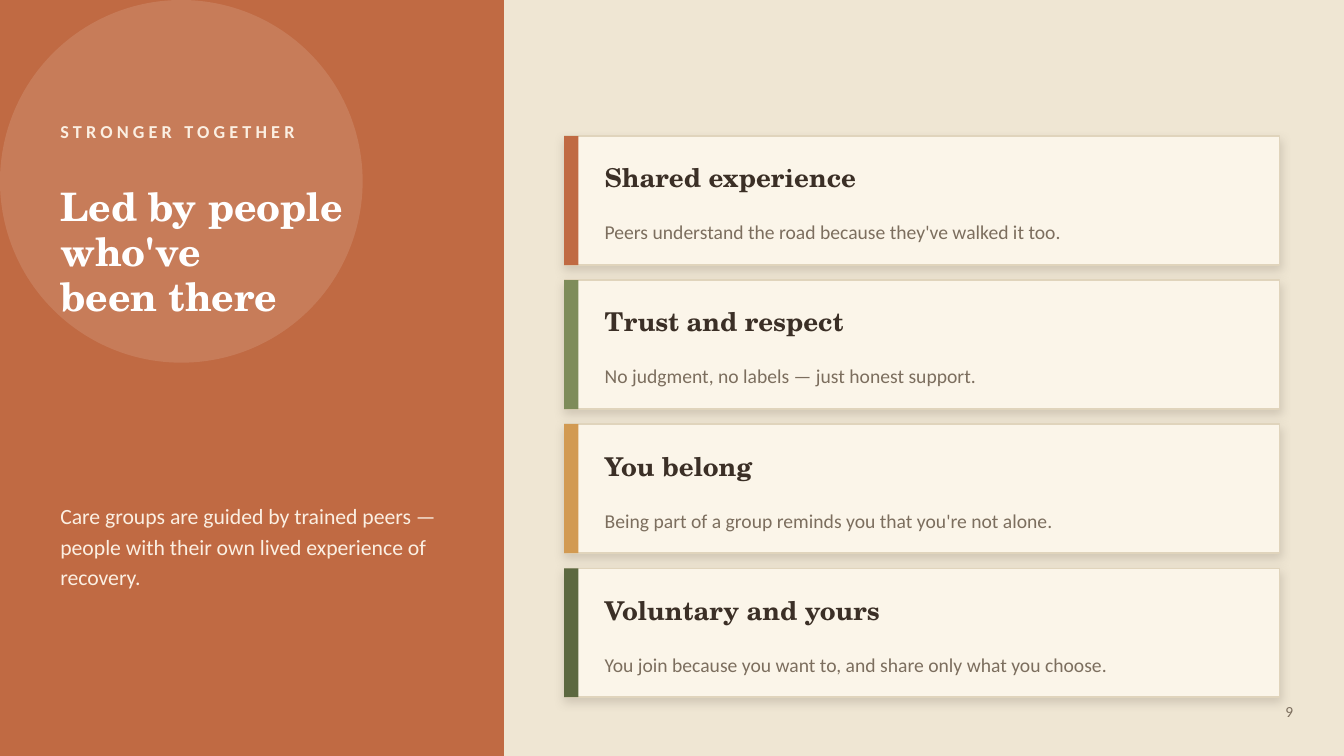
from lxml import etree
from pptx import Presentation
from pptx.dml.color import RGBColor
from pptx.enum import shapes, text
from pptx.oxml import ns
from pptx.util import Cm, Pt

KICKER = "STRONGER TOGETHER"
TITLE = ["Led by people who've", "been there"]
INTRO = ("Care groups are guided by trained peers — people with their own "
         "lived experience of recovery.")
CARDS = [
    ("Shared experience", "Peers understand the road because they've walked it too.", "clay"),
    ("Trust and respect", "No judgment, no labels — just honest support.", "sage"),
    ("You belong", "Being part of a group reminds you that you're not alone.", "gold"),
    ("Voluntary and yours", "You join because you want to, and share only what you choose.", "moss"),
]
PAGE = "9"

COLORS = {
    "sand": "EFE6D3", "clay": "C06A43", "sage": "7E8C5A", "gold": "D29A52",
    "moss": "5C6840", "cream": "FBF5E9", "edge": "E0D4BC", "white": "FFFFFF",
    "blush": "FBEFE2", "ink": "3B2F26", "taupe": "7C6E5E",
}
SERIF, SANS = "TeX Gyre Schola", "Calibri"
WIDTH, HEIGHT = 33.87, 19.05
PANEL = 12.7
MARGIN, COLUMN = 1.52, 10.16
CARD_X, CARD_Y, CARD_W, CARD_H, PITCH = 14.22, 3.43, 18.03, 3.25, 3.63
BAR = 0.36
TEXT_X, TEXT_W = 15.24, 16.51


def color(name):
    return RGBColor.from_string(COLORS[name])


def add_alpha(node, percent):
    etree.SubElement(node, ns.qn("a:alpha"), val=str(percent * 1000))


def add_block(kind, box, fill, line=None):
    block = slide.shapes.add_shape(kind, *map(Cm, box))
    block.shadow.inherit = False
    block.fill.solid()
    block.fill.fore_color.rgb = color(fill)
    if line:
        block.line.color.rgb = color(line)
        block.line.width = Pt(1)
    else:
        block.line.fill.background()
    return block


def add_shadow(block):
    effects = block._element.spPr.find(ns.qn("a:effectLst"))
    outer = etree.SubElement(effects, ns.qn("a:outerShdw"), blurRad=str(Pt(7)),
                             dist=str(Pt(3)), dir="5400000", algn="ctr", rotWithShape="0")
    add_alpha(etree.SubElement(outer, ns.qn("a:srgbClr"), val=COLORS["ink"]), 16)


def write(shape, lines, font, size, tint, bold=False, lead=None, align="LEFT", inset=0):
    frame = shape.text_frame
    frame.text = "\n".join(lines)
    frame.word_wrap = True
    frame.auto_size = text.MSO_AUTO_SIZE.NONE
    frame.vertical_anchor = text.MSO_ANCHOR.MIDDLE
    frame.margin_left = frame.margin_right = Cm(inset)
    frame.margin_top = frame.margin_bottom = Cm(inset / 2)
    for para in frame.paragraphs:
        para.alignment = getattr(text.PP_ALIGN, align)
        if lead:
            para.line_spacing = Pt(lead)
        para.font.name, para.font.size, para.font.bold = font, Pt(size), bold
        para.font.color.rgb = color(tint)


def add_text(box, line, *style, **more):
    shape = slide.shapes.add_textbox(*map(Cm, box))
    write(shape, [line], *style, **more)
    return shape


deck = Presentation()
deck.slide_width, deck.slide_height = Cm(WIDTH), Cm(HEIGHT)
slide = deck.slides.add_slide(deck.slide_layouts.get_by_name("Title Only"))
slide.background.fill.solid()
slide.background.fill.fore_color.rgb = color("sand")

# Left panel
rect = shapes.MSO_SHAPE.RECTANGLE
add_block(rect, (0, 0, PANEL, HEIGHT), "clay")
disc = add_block(shapes.MSO_SHAPE.OVAL, (0, 0, 9.14, 9.14), "white")
add_alpha(disc._element.spPr.find(".//" + ns.qn("a:srgbClr")), 12)

kicker = add_text((MARGIN, 2.79, COLUMN, 1.02), KICKER, SANS, 13, "blush", bold=True)
kicker.text_frame.paragraphs[0].runs[0]._r.get_or_add_rPr().set("spc", "300")

title = slide.shapes.title
title.left, title.top, title.width, title.height = map(Cm, (MARGIN, 4.06, COLUMN, 4.57))
write(title, TITLE, SERIF, 28, "white", bold=True, lead=32)
slide.shapes._spTree.append(title._element)  # in front of the panel

add_text((MARGIN, 11.68, COLUMN, 4.06), INTRO, SANS, 15.5, "blush", lead=22)

# Cards
for i, (head, body, accent) in enumerate(CARDS):
    top = CARD_Y + i * PITCH
    add_shadow(add_block(rect, (CARD_X, top, CARD_W, CARD_H), "cream", "edge"))
    add_block(rect, (CARD_X, top, BAR, CARD_H), accent)
    add_text((TEXT_X, top + 0.41, TEXT_W, 1.27), head, SERIF, 18.5, "ink", bold=True)
    add_text((TEXT_X, top + 1.68, TEXT_W, 1.4), body, SANS, 14, "taupe", lead=19)

add_text((31.57, 17.48, 1.27, 0.89), PAGE, SANS, 11, "taupe", align="RIGHT", inset=0.25)

deck.save("out.pptx")
